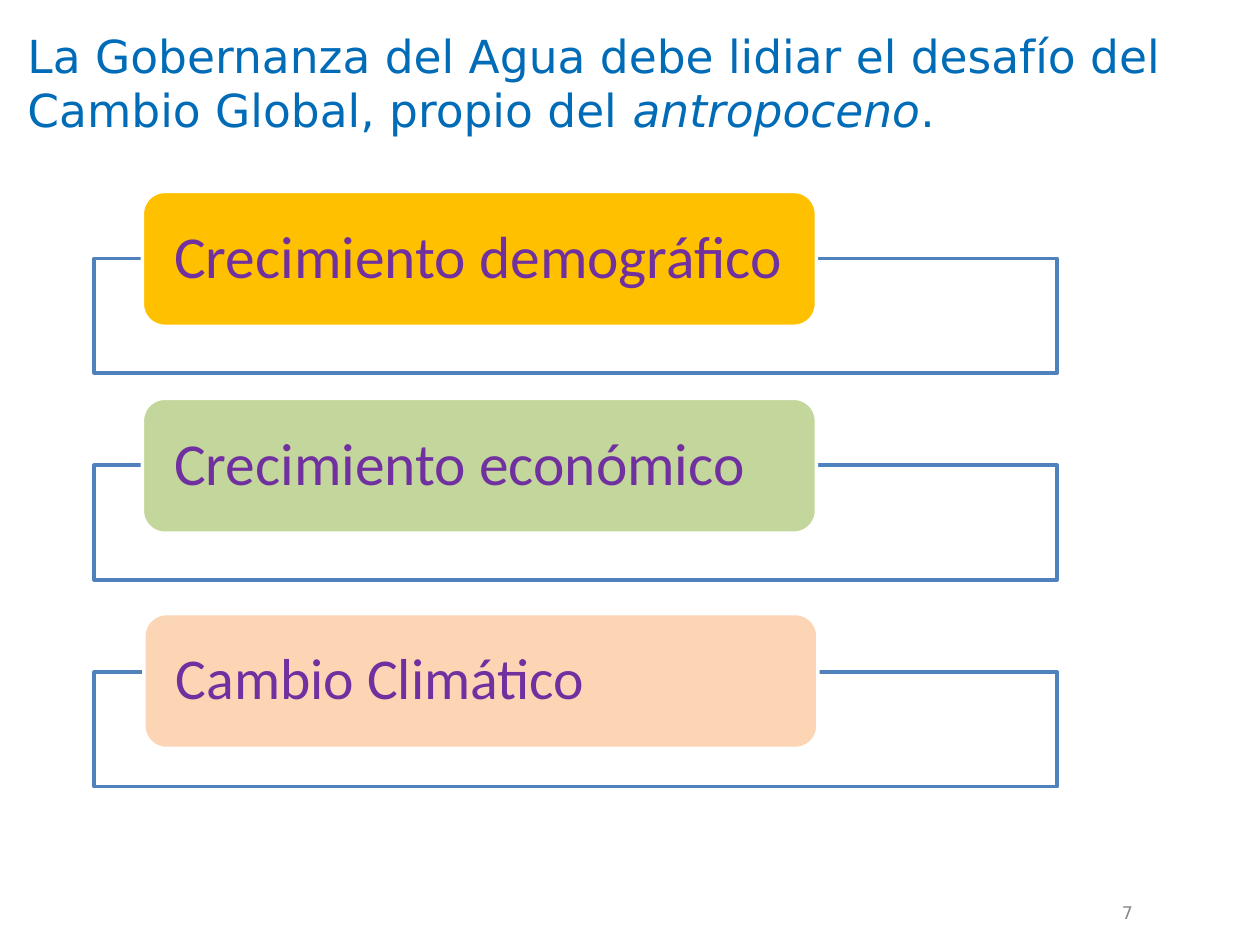
from dataclasses import dataclass

from lxml import etree
from pptx import Presentation
from pptx import util as u
from pptx.dml.color import RGBColor
from pptx.enum import shapes, text
from pptx.oxml.ns import qn


@dataclass(frozen=True)
class Theme:
    title: str = "006CB7"
    frame: str = "4F81BD"
    white: str = "FFFFFF"
    label: str = "7030A0"
    number: str = "898989"
    title_font: str = "DejaVu Sans"
    label_font: str = "Calibri"
    title_size: float = 26
    number_size: float = 10
    line_width: float = 2


@dataclass(frozen=True)
class Challenge:
    label: str
    fill: str
    size: float = 34
    shift_x: float = 0
    shift_y: float = 0


THEME = Theme()
CHALLENGES = (
    Challenge("Crecimiento demográfico", "FFC000"),
    Challenge("Crecimiento económico", "C3D69B"),
    Challenge("Cambio Climático", "FCD5B5", 33, 0.03, 0.17),
)
FIRST_FRAME_TOP = 5.21
FRAME_PITCH = 4.17
LABEL_RISE = 1.35


def style_font(font, name: str, size: float, color: str) -> None:
    font.name = name
    font.size = u.Pt(size)
    font.color.rgb = RGBColor.from_string(color)


def add_panel(slide, kind, left: float, top: float, width: float, height: float,
              fill: str, line: str):
    panel = slide.shapes.add_shape(kind, u.Cm(left), u.Cm(top), u.Cm(width), u.Cm(height))
    panel.shadow.inherit = False
    panel.fill.solid()
    panel.fill.fore_color.rgb = RGBColor.from_string(fill)
    panel.line.color.rgb = RGBColor.from_string(line)
    panel.line.width = u.Pt(THEME.line_width)
    return panel


def set_opacity(panel, percent: int) -> None:
    color = panel.fill._xPr.find(qn("a:solidFill"))[0]
    etree.SubElement(color, qn("a:alpha"), val=str(percent * 1000))


def add_challenge(slide, challenge: Challenge, frame_top: float) -> None:
    """Draw an open frame with its coloured label straddling the top edge."""
    frame = add_panel(slide, shapes.MSO_SHAPE.RECTANGLE, 1.9, frame_top, 19.41, 2.31,
                      THEME.white, THEME.frame)
    set_opacity(frame, 90)
    label = add_panel(slide, shapes.MSO_SHAPE.ROUNDED_RECTANGLE,
                      2.87 + challenge.shift_x, frame_top - LABEL_RISE + challenge.shift_y,
                      13.59, 2.72, challenge.fill, THEME.white)
    content = label.text_frame
    content.text = challenge.label
    content.vertical_anchor = text.MSO_ANCHOR.MIDDLE
    content.margin_left, content.margin_right = u.Cm(0.51), u.Cm(0.25)
    content.margin_top = content.margin_bottom = 0
    paragraph = content.paragraphs[0]
    paragraph.alignment = text.PP_ALIGN.LEFT
    paragraph.line_spacing = 0.9
    style_font(paragraph.runs[0].font, THEME.label_font, challenge.size, THEME.label)


def fill_title(slide) -> None:
    title = slide.shapes.title
    title.left, title.top = u.Cm(0.3), u.Cm(0.43)
    title.width, title.height = u.Cm(25.1), u.Cm(3.3)
    title.text_frame.vertical_anchor = text.MSO_ANCHOR.TOP
    paragraph = title.text_frame.paragraphs[0]
    paragraph.alignment = text.PP_ALIGN.LEFT
    sentence = (
        ("La Gobernanza del Agua debe lidiar el desafío del Cambio Global, propio del ", False),
        ("antropoceno", True),
        (".", False),
    )
    for words, italic in sentence:
        run = paragraph.add_run()
        run.text = words
        style_font(run.font, THEME.title_font, THEME.title_size, THEME.title)
        run.font.italic = italic


def add_page_number(slide, number: str) -> None:
    box = slide.shapes.add_textbox(u.Cm(17.17), u.Cm(18.14), u.Cm(5.92), u.Cm(0.53))
    content = box.text_frame
    content.word_wrap = True
    content.vertical_anchor = text.MSO_ANCHOR.MIDDLE
    content.text = number
    paragraph = content.paragraphs[0]
    paragraph.alignment = text.PP_ALIGN.RIGHT
    style_font(paragraph.runs[0].font, THEME.title_font, THEME.number_size, THEME.number)


def main() -> None:
    deck = Presentation()
    deck.slide_width, deck.slide_height = u.Cm(25.4), u.Cm(19.05)
    slide = deck.slides.add_slide(deck.slide_layouts.get_by_name("Title Only"))
    fill_title(slide)
    add_page_number(slide, "7")
    for row, challenge in enumerate(CHALLENGES):
        add_challenge(slide, challenge, FIRST_FRAME_TOP + row * FRAME_PITCH)
    deck.save("out.pptx")


if __name__ == "__main__":
    main()
